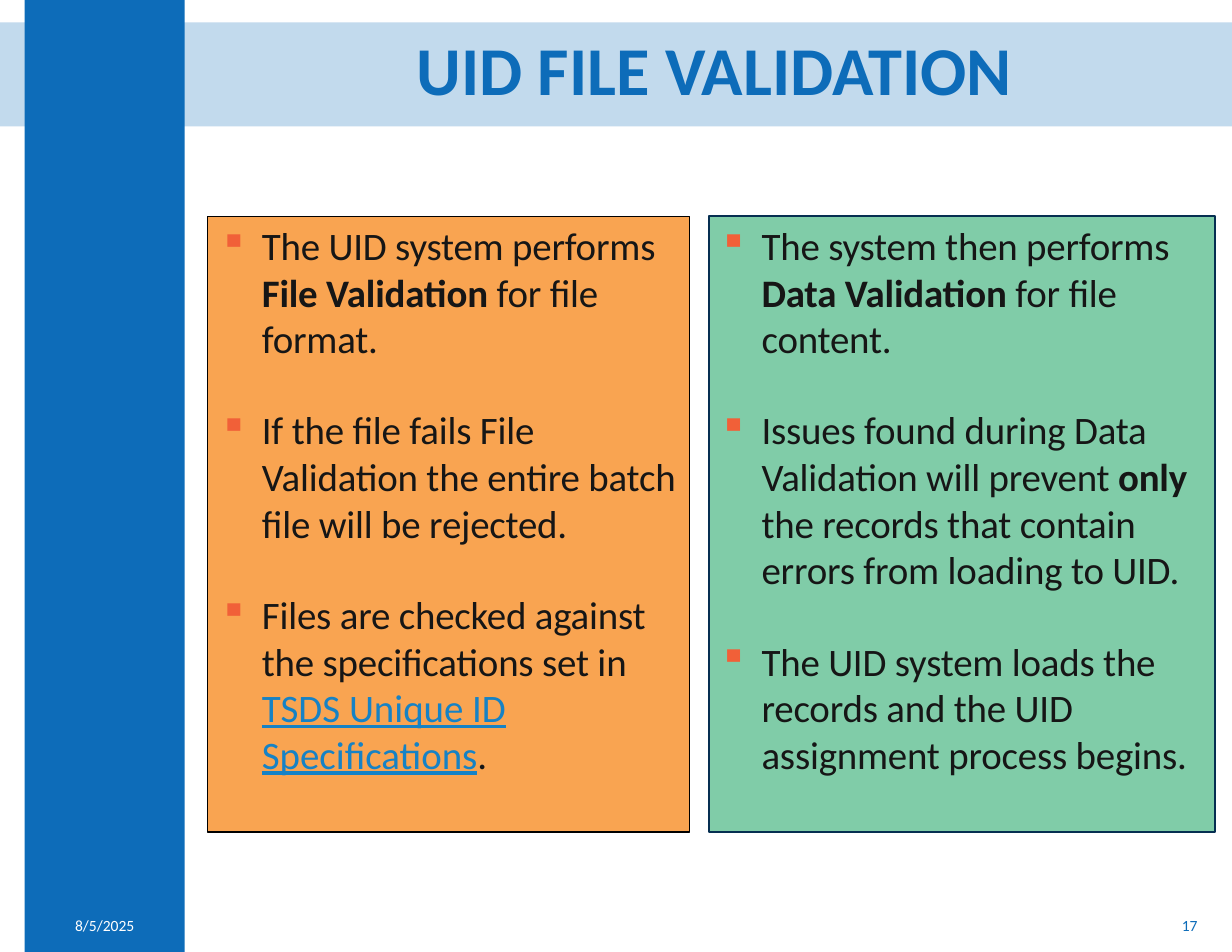
from lxml import etree
from pptx import Presentation
from pptx.dml.color import RGBColor
from pptx.enum.shapes import MSO_SHAPE as SHAPE
from pptx.enum.text import MSO_ANCHOR as ANCHOR, PP_ALIGN as ALIGN
from pptx.oxml.ns import qn
from pptx.util import Inches, Pt

BLUE, WHITE, INK, LINK = "0D6CB9", "FFFFFF", "161616", "1682C5"


def rgb(value):
    return RGBColor.from_string(value)


def add_bullet(p):
    """Give the paragraph a hanging orange square bullet."""
    pPr = p._p.get_or_add_pPr()
    pPr.set("marL", str(Inches(0.39)))
    pPr.set("indent", str(Inches(-0.38)))
    color = etree.SubElement(pPr, qn("a:buClr"))
    etree.SubElement(color, qn("a:srgbClr"), val="F16038")
    etree.SubElement(pPr, qn("a:buChar"), char="▪")


prs = Presentation()
prs.slide_width, prs.slide_height = Inches(11), Inches(8.5)
s = prs.slides.add_slide(prs.slide_layouts[6])

# Title band (translucent) and side bar
for left, top, width, height, alpha in [(0, 0.2, 11, 0.93, 25), (0.22, 0, 1.43, 8.5, 100)]:
    sp = s.shapes.add_shape(SHAPE.RECTANGLE, Inches(left), Inches(top), Inches(width), Inches(height))
    sp.shadow.inherit = False
    sp.fill.solid()
    sp.fill.fore_color.rgb = rgb(BLUE)
    sp.line.fill.background()
    if alpha < 100:
        color = sp._element.spPr.find(".//" + qn("a:srgbClr"))
        etree.SubElement(color, qn("a:alpha"), val=str(alpha * 1000))

# Title, date and slide number
labels = [
    ("UID FILE VALIDATION", 2.09, 0.19, 8.58, 0.93, 44, True, BLUE, ALIGN.CENTER),
    ("8/5/2025", 0.22, 8.05, 1.43, 0.45, 10, False, WHITE, ALIGN.CENTER),
    ("17", 8.31, 8.05, 2.48, 0.45, 10, False, BLUE, ALIGN.RIGHT),
]
for text, left, top, width, height, size, bold, color, align in labels:
    tf = s.shapes.add_textbox(Inches(left), Inches(top), Inches(width), Inches(height)).text_frame
    tf.word_wrap = True
    tf.vertical_anchor = ANCHOR.MIDDLE
    tf.text = text
    p = tf.paragraphs[0]
    p.alignment = align
    p.line_spacing = 0.9
    font = p.runs[0].font
    font.name, font.size, font.bold = "Calibri", Pt(size), bold
    font.color.rgb = rgb(color)

# Panels: left, width, fill, line colour, line width, side insets, bullets as (text, style) runs
panels = [
    (1.85, 4.31, "F9A451", "000000", 0.75, 0.1, 0.1, [
        [("The UID system performs ", ""), ("File Validation ", "bold"), ("for file format.", "")],
        [("If the file fails File Validation the entire batch file will be rejected.", "")],
        [("Files are checked against the specifications set in ", ""),
         ("TSDS Unique ID Specifications", "link"), (".", "")],
    ]),
    (6.33, 4.52, "80CCA8", "062F51", 1, 0.08, 0.21, [
        [("The system then performs ", ""), ("Data Validation ", "bold"), ("for file content.", "")],
        [("Issues found during Data Validation will prevent ", ""), ("only", "bold"),
         (" the records that contain errors from loading to UID.", "")],
        [("The UID system loads the records and the UID assignment process begins.", "")],
    ]),
]
for left, width, fill, line, weight, inset_left, inset_right, bullets in panels:
    sp = s.shapes.add_shape(SHAPE.RECTANGLE, Inches(left), Inches(1.93), Inches(width), Inches(5.5))
    sp.shadow.inherit = False
    sp.fill.solid()
    sp.fill.fore_color.rgb = rgb(fill)
    sp.line.color.rgb = rgb(line)
    sp.line.width = Pt(weight)
    tf = sp.text_frame
    tf.word_wrap = True
    tf.vertical_anchor = ANCHOR.TOP
    tf.margin_left, tf.margin_right = Inches(inset_left), Inches(inset_right)
    for i, runs in enumerate(bullets):
        p = tf.add_paragraph() if i else tf.paragraphs[0]
        add_bullet(p)
        p.alignment = ALIGN.LEFT
        p.space_before = Pt(28.6 if i else 0)
        for text, style in runs:
            r = p.add_run()
            r.text = text
            r.font.name, r.font.size = "Calibri", Pt(25)
            r.font.bold = style == "bold"
            r.font.underline = style == "link"
            r.font.color.rgb = rgb(LINK if style == "link" else INK)
            r.font._element.set("spc", "0" if style == "link" else "-10")

prs.save("out.pptx")
